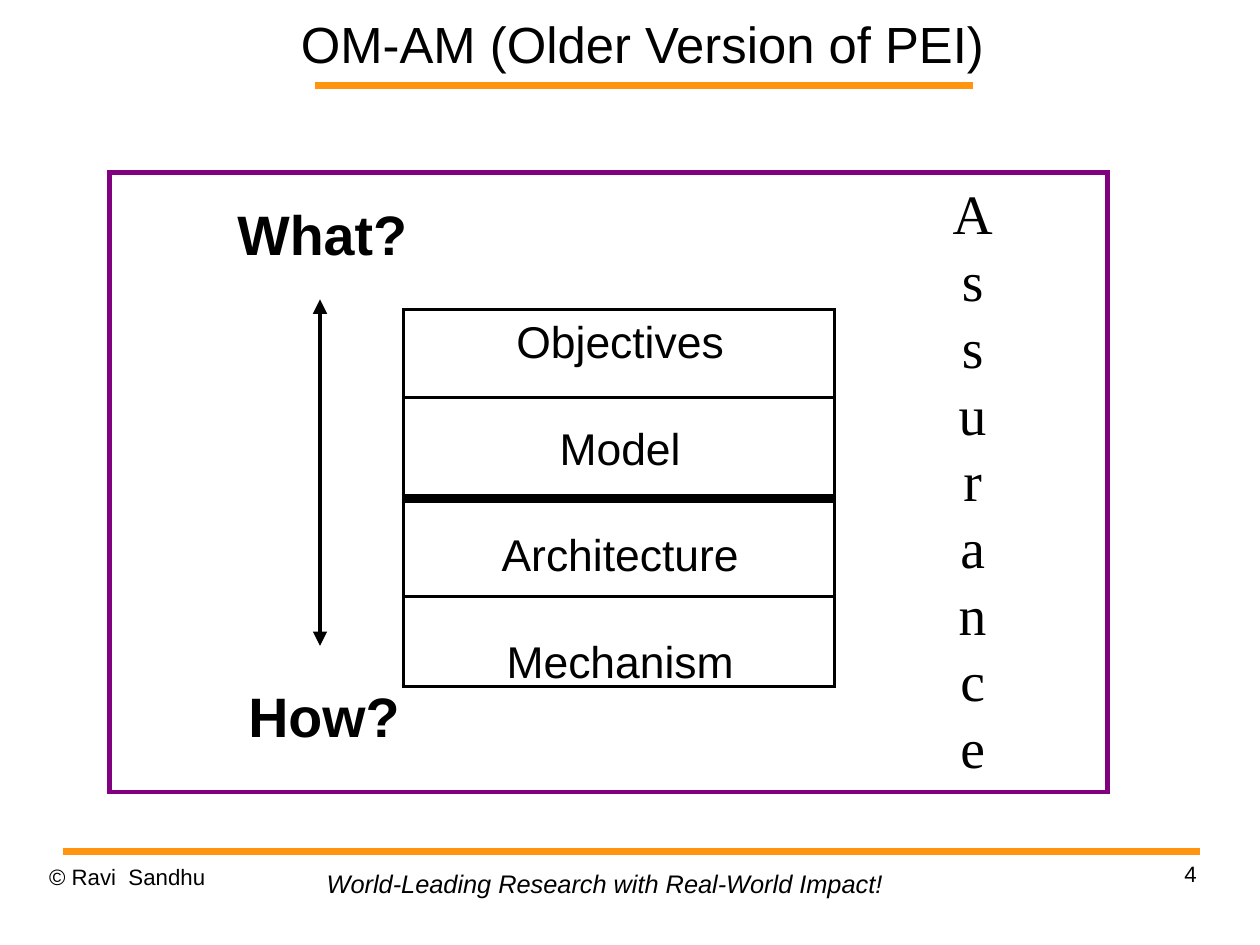
import pptx
import pptx.util
import pptx.dml.color
import pptx.enum.shapes
import pptx.enum.text
import pptx.oxml.xmlchemy

# Content
TITLE = "OM-AM (Older Version of PEI)"
LAYERS = ["Objectives", "Model", "Architecture", "Mechanism"]
SIDE_WORD = "Assurance"
QUESTIONS = [("What?", (196, 169, 172, 70)), ("How?", (206, 591, 155, 70))]
COPYRIGHT = "© Ravi  Sandhu"
TAGLINE = "World-Leading Research with Real-World Impact!"
PAGE = "4"

# Layout in px, 100 to the inch: left, top, width, height
FRAME = (96, 151, 873, 542)
STACK = (353, 271, 377, 330)
THIN_DIVIDERS = [348, 522]
RULES = [(276, 75, 851, 75), (55, 745, 1050, 745)]
ARROW = (280, 262, 280, 565)
LOOSE = (11, 6, 11, 6)

# Page of 28 by 21 cm, in EMU
SLIDE_WIDTH, SLIDE_HEIGHT = 10080625, 7559675


class Theme:
    ink, accent, frame = "000000", "FF950E", "800080"
    sans, serif = "Arial", "Times New Roman"
    title, big, layer, tagline, footer = 32, 35, 28, 16, 14
    leading = 1.2


ALIGN = pptx.enum.text.PP_ALIGN
ANCHOR = pptx.enum.text.MSO_ANCHOR
Pt = pptx.util.Pt


def px(n):
    return pptx.util.Emu(n * 9144)


def rgb(color):
    return pptx.dml.color.RGBColor.from_string(color)


def add_element(parent, tag, **attributes):
    element = pptx.oxml.xmlchemy.OxmlElement(tag)
    for name, value in attributes.items():
        element.set(name, value)
    parent.append(element)


prs = pptx.Presentation()
prs.slide_width, prs.slide_height = SLIDE_WIDTH, SLIDE_HEIGHT
slide = prs.slides.add_slide(prs.slide_layouts[6])


def add_text(paragraphs, box, size, font=Theme.sans, align=ALIGN.LEFT, anchor=ANCHOR.TOP,
             inset=(0, 0, 0, 0), wrap=True, bold=False, italic=False, gap=0):
    tf = slide.shapes.add_textbox(*map(px, box)).text_frame
    tf.margin_left, tf.margin_top, tf.margin_right, tf.margin_bottom = map(px, inset)
    tf.word_wrap = wrap
    if not wrap:
        tf.auto_size = pptx.enum.text.MSO_AUTO_SIZE.SHAPE_TO_FIT_TEXT
    tf.vertical_anchor = anchor
    for i, text in enumerate(paragraphs):
        p = tf.add_paragraph() if i else tf.paragraphs[0]
        p.alignment = align
        p.line_spacing = Pt(size * Theme.leading)
        if i and gap:
            p.space_before = Pt(gap)
        r = p.add_run()
        r.text = text
        r.font.name, r.font.size = font, Pt(size)
        r.font.bold, r.font.italic = bold, italic
        r.font.color.rgb = rgb(Theme.ink)


def add_line(ends, color, width, arrows=False):
    cxn = slide.shapes.add_connector(pptx.enum.shapes.MSO_CONNECTOR.STRAIGHT, *map(px, ends))
    cxn.line.color.rgb = rgb(color)
    cxn.line.width = Pt(width)
    if arrows:
        for tag in ("a:headEnd", "a:tailEnd"):
            add_element(cxn.line._get_or_add_ln(), tag, type="triangle")
    add_element(cxn._element.spPr, "a:effectLst")
    return cxn


def add_outline(box, color, width):
    sp = slide.shapes.add_shape(pptx.enum.shapes.MSO_SHAPE.RECTANGLE, *map(px, box))
    sp.shadow.inherit = False
    sp.fill.background()
    sp.line.color.rgb = rgb(color)
    sp.line.width = Pt(width)
    add_element(sp.line._get_or_add_ln(), "a:miter", lim="800000")
    return sp


# Rules, footer and title
for ends in RULES:
    add_line(ends, Theme.accent, 4.31)
add_text([COPYRIGHT], (43, 755, 257, 57), Theme.footer)
add_text([PAGE], (790, 753, 257, 57), Theme.footer, align=ALIGN.RIGHT)
add_text([TAGLINE], (276, 755, 508, 37), Theme.tagline, italic=True, wrap=False,
         inset=(10, 5, 10, 5))
add_text([TITLE], (241, 0, 643, 75), Theme.title, align=ALIGN.CENTER, anchor=ANCHOR.MIDDLE)

# Stack of layers: one line's height between names
add_text(LAYERS, (353, 270, 367, 330), Theme.layer, align=ALIGN.CENTER,
         inset=(22, 5, 10, 5), gap=Theme.layer * Theme.leading)
stack = add_outline(STACK, Theme.ink, 2)
left, top, width, height = STACK
for y in THIN_DIVIDERS:
    add_line((left, y, left + width, y), Theme.ink, 2)
middle = top + height // 2
divider = add_line((left, middle, left + width, middle), Theme.ink, 6)
divider.begin_connect(stack, 1)
divider.end_connect(stack, 3)

# From what to how
add_line(ARROW, Theme.ink, 3, arrows=True)
for question, box in QUESTIONS:
    add_text([question], box, Theme.big, align=ALIGN.CENTER, bold=True, wrap=False, inset=LOOSE)

# Frame and the word running down its side
add_outline(FRAME, Theme.frame, 3)
add_text(SIDE_WORD, (822, 151, 58, 540), Theme.big, font=Theme.serif, align=ALIGN.CENTER,
         wrap=False, inset=LOOSE)

prs.save("out.pptx")
